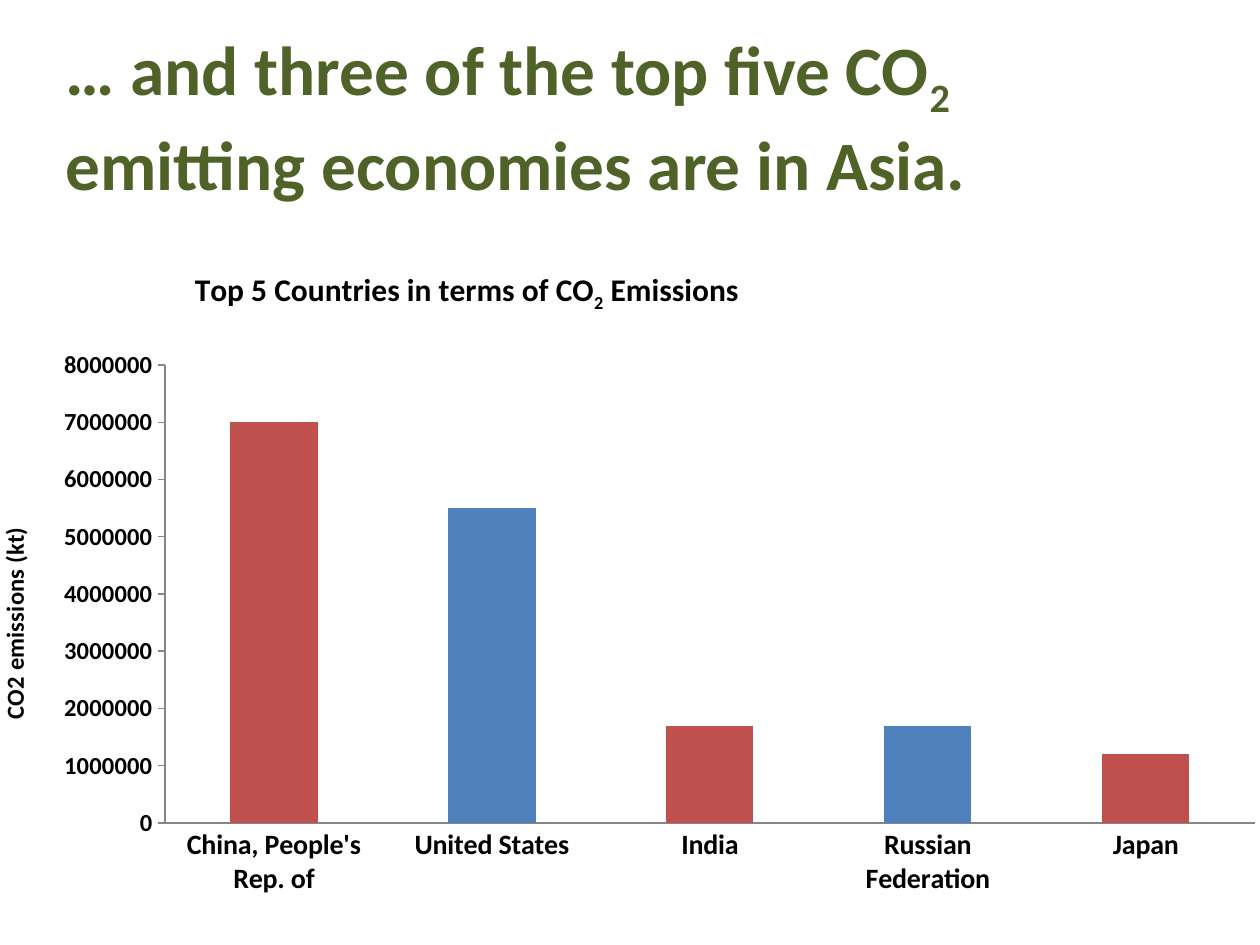
"""Build a slide with a column chart of the five largest CO2 emitters."""
from pptx import Presentation
from pptx.chart.data import CategoryChartData
from pptx.dml.color import RGBColor
from pptx.enum.chart import XL_CHART_TYPE, XL_TICK_MARK
from pptx.enum.text import MSO_ANCHOR, PP_ALIGN
from pptx.oxml import parse_xml
from pptx.oxml.ns import nsdecls, qn
from pptx.util import Pt

PX = 914400 // 126
HEX = {"green": "4F6228", "black": "000000", "red": "C0504D",
       "blue": "4F81BD", "grey": "868686"}
SIZE = (1260, 945)
HEAD = {"left": 53, "top": 31, "width": 1134, "height": 168}
CHART = (-42, 231, 1333, 683)
TITLE = [("… and three of the top five CO", 0), ("2 ", -25),
         ("emitting economies are in Asia.", 0)]
NAME = [("Top 5 Countries in terms of CO", 0), ("2", -25), (" Emissions", 0)]
UNIT = [("CO2 emissions (kt)", 0)]
DATA = [("China, People's Rep. of", 7000000, "red"),
        ("United States", 5500000, "blue"),
        ("India", 1700000, "red"),
        ("Russian Federation", 1700000, "blue"),
        ("Japan", 1200000, "red")]
PLACE = {"plot": {"x": 207, "y": 134, "w": 1090, "h": 458},
         "name": {"x": 233, "y": 34}, "unit": {"x": 35, "y": 292}}


def style(font, size, color="black"):
    look = {"name": "Calibri", "size": Pt(size), "bold": True}
    for key, value in look.items():
        setattr(font, key, value)
    font.color.rgb = RGBColor.from_string(HEX[color])


def write(frame, parts, size, color="black"):
    para = frame.paragraphs[0]
    for text, base in parts:
        run = para.add_run()
        run.text = text
        style(run.font, size, color)
        if base:
            run.font._element.set("baseline", str(base * 1000))
    return para


def layout(spot):
    wide, high = CHART[2:]
    full = {"x": wide, "y": high, "w": wide, "h": high}
    modes = "".join(f'<c:{k}Mode val="edge"/>' for k in "xy")
    inner = '<c:layoutTarget val="inner"/>' if "w" in spot else ""
    sizes = "".join(f'<c:{k} val="{v / full[k]}"/>' for k, v in spot.items())
    return parse_xml(f'<c:layout {nsdecls("c")}><c:manualLayout>{inner}'
                     f'{modes}{sizes}</c:manualLayout></c:layout>')


def move(node, spot):
    for old in node.findall(qn("c:layout")):
        node.remove(old)
    text = node.find(qn("c:tx"))
    if text is None:
        node.insert(0, layout(spot))
    else:
        text.addnext(layout(spot))


def draw(slide):
    data = CategoryChartData()
    data.categories = [row[0] for row in DATA]
    data.add_series("Series 1", [row[1] for row in DATA])
    box = [n * PX for n in CHART]
    chart = slide.shapes.add_chart(
        XL_CHART_TYPE.COLUMN_CLUSTERED, *box, data).chart
    style(chart.font, 14)
    chart.has_legend = False
    plot = chart.plots[0]
    plot.gap_width, plot.vary_by_categories = 150, False

    bars = plot.series[0]
    for spot, (_, _, color) in enumerate(DATA):
        fill = bars.points[spot].format.fill
        fill.solid()
        fill.fore_color.rgb = RGBColor.from_string(HEX[color])

    rows, cols = chart.value_axis, chart.category_axis
    rows.minimum_scale, rows.maximum_scale, rows.major_unit = 0, 8e6, 1e6
    rows.tick_labels.number_format = "0"
    rows.tick_labels.number_format_is_linked = False
    for axis, tick, size in ((rows, XL_TICK_MARK.OUTSIDE, 14),
                             (cols, XL_TICK_MARK.NONE, 16)):
        axis.has_major_gridlines = False
        axis.major_tick_mark = tick
        style(axis.tick_labels.font, size)
        axis.format.line.width = Pt(0.75)
        axis.format.line.color.rgb = RGBColor.from_string(HEX["grey"])

    for title, parts, size, key in ((chart.chart_title, NAME, 18, "name"),
                                    (rows.axis_title, UNIT, 14, "unit")):
        write(title.text_frame, parts, size)
        move(title._element, PLACE[key])
    move(chart._chartSpace.chart.plotArea, PLACE["plot"])


def main():
    deck = Presentation()
    deck.slide_width, deck.slide_height = [n * PX for n in SIZE]
    slide = deck.slides.add_slide(deck.slide_layouts[5])
    head = slide.shapes.title
    for key, value in HEAD.items():
        setattr(head, key, value * PX)
    frame = head.text_frame
    frame.word_wrap, frame.vertical_anchor = True, MSO_ANCHOR.MIDDLE
    write(frame, TITLE, 39.6, "green").alignment = PP_ALIGN.LEFT
    draw(slide)
    deck.save("out.pptx")


if __name__ == "__main__":
    main()
